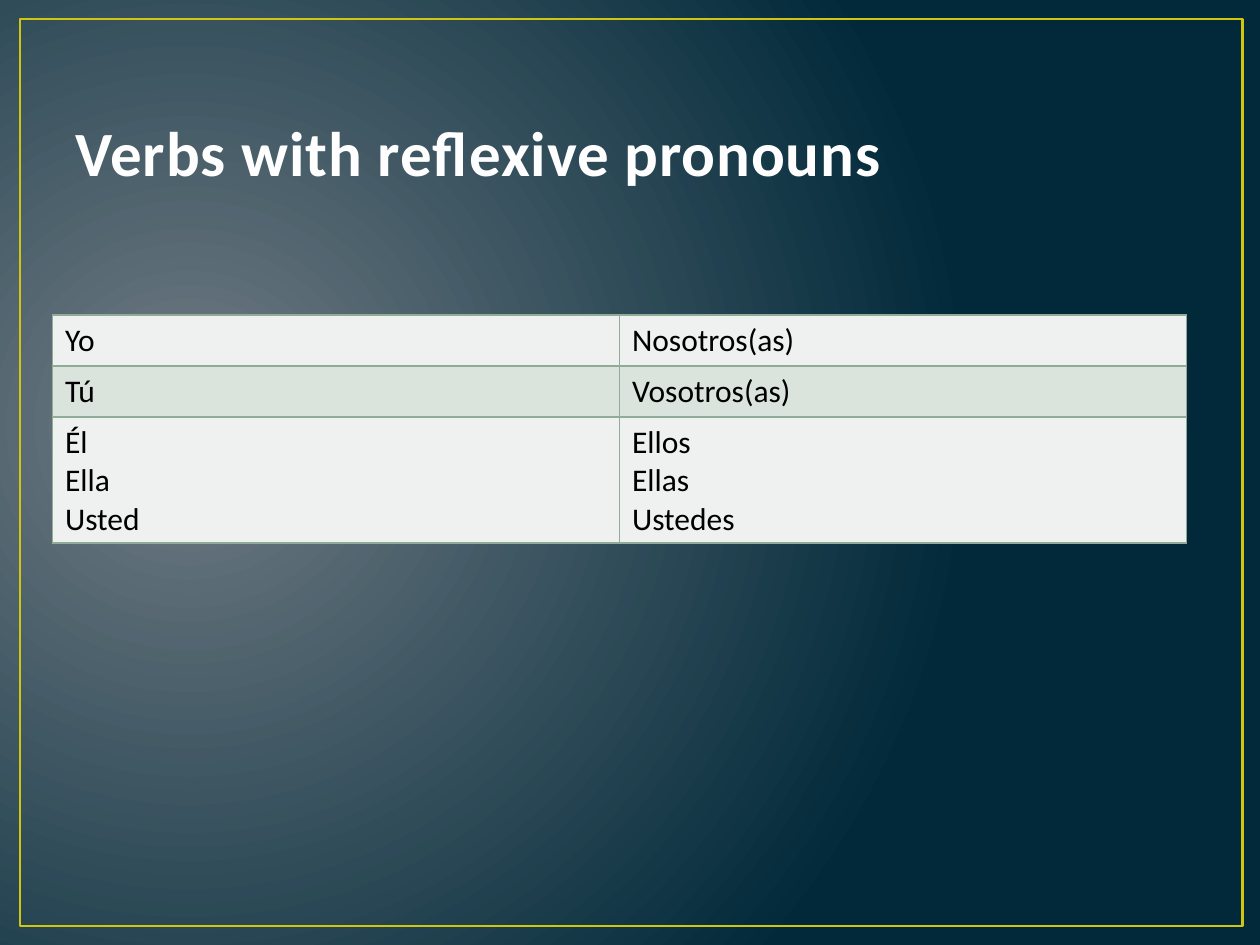
"""Build a slide with a table of Spanish subject pronouns."""
import pptx
import pptx.dml.color
import pptx.enum.shapes
import pptx.enum.text
import pptx.oxml
import pptx.oxml.ns
import pptx.util

Pt = pptx.util.Pt
NAMESPACE = pptx.oxml.ns.nsdecls("a")


def color(value):
    return pptx.dml.color.RGBColor.from_string(value)


class SlideBuilder:
    font = "Calibri"
    border = "90AC97"
    bands = ("EEF1EF", "DBE3DD")

    def __init__(self, page):
        self.page = page

    def style(self, para, size, ink, bold=False):
        para.font.name = self.font
        para.font.size = Pt(size)
        para.font.bold = bold
        para.font.color.rgb = color(ink)

    def background(self, inner, outer):
        fill = self.page.background.fill
        fill.gradient()
        for stop, value, position in zip(fill.gradient_stops, (inner, outer), (0, 1)):
            stop.color.rgb = color(value)
            stop.position = position
        properties = self.page.background._cSld.bg.bgPr
        linear = properties.find(".//" + pptx.oxml.ns.qn("a:lin"))
        radial = pptx.oxml.parse_xml(
            f'<a:path {NAMESPACE} path="circle">'
            '<a:fillToRect l="15000" t="50000" r="85000" b="60000"/></a:path>')
        linear.getparent().replace(linear, radial)

    def frame(self, left, top, width, height, line, weight):
        box = self.page.shapes.add_shape(
            pptx.enum.shapes.MSO_SHAPE.RECTANGLE, Pt(left), Pt(top), Pt(width), Pt(height))
        box.shadow.inherit = False
        box.fill.background()
        box.line.color.rgb = color(line)
        box.line.width = Pt(weight)

    def title(self, text, left, top, width, height):
        box = self.page.shapes.add_textbox(Pt(left), Pt(top), Pt(width), Pt(height))
        box.text_frame.word_wrap = True
        box.text_frame.vertical_anchor = pptx.enum.text.MSO_ANCHOR.BOTTOM
        para = box.text_frame.paragraphs[0]
        self.style(para, 36, "FEFEFE", True)
        span = para.add_run()
        span.text = text
        properties = span._r.get_or_add_rPr()
        properties.set("spc", "50")
        properties.append(pptx.oxml.parse_xml(
            f'<a:ln {NAMESPACE} w="13335"><a:solidFill><a:srgbClr val="384F55"/></a:solidFill></a:ln>'))

    def cell(self, cell, text, fill):
        properties = cell._tc.get_or_add_tcPr()
        for side in "LRTB":
            properties.append(pptx.oxml.parse_xml(
                f'<a:ln{side} {NAMESPACE} w="12700"><a:solidFill>'
                f'<a:srgbClr val="{self.border}"/></a:solidFill></a:ln{side}>'))
        cell.fill.solid()
        cell.fill.fore_color.rgb = color(fill)
        cell.text_frame.text = text
        for para in cell.text_frame.paragraphs:
            self.style(para, 18, "000000")

    def table(self, rows, heights, left, top, width):
        table = self.page.shapes.add_table(
            len(rows), len(rows[0]), Pt(left), Pt(top), Pt(width), Pt(sum(heights))).table
        table.first_row = False
        table.horz_banding = False
        for index, (texts, height) in enumerate(zip(rows, heights)):
            table.rows[index].height = Pt(height)
            for column, text in enumerate(texts):
                self.cell(table.cell(index, column), text, self.bands[index % 2])


def main():
    deck = pptx.Presentation()
    deck.slide_width, deck.slide_height = Pt(720), Pt(540)
    builder = SlideBuilder(deck.slides.add_slide(deck.slide_layouts[6]))
    builder.background("717C84", "01293A")
    builder.frame(11.5, 10.8, 698.4, 518.4, "CFC60D", 1.5)
    builder.title("Verbs with reflexive pronouns", 36, 21.6, 648, 90)
    pronouns = [
        ("Yo", "Nosotros(as)"),
        ("Tú", "Vosotros(as)"),
        ("Él\nElla\nUsted", "Ellos\nEllas\nUstedes"),
    ]
    builder.table(pronouns, (29.2, 29.2, 72), 30, 180, 648)
    deck.save("out.pptx")


if __name__ == "__main__":
    main()
